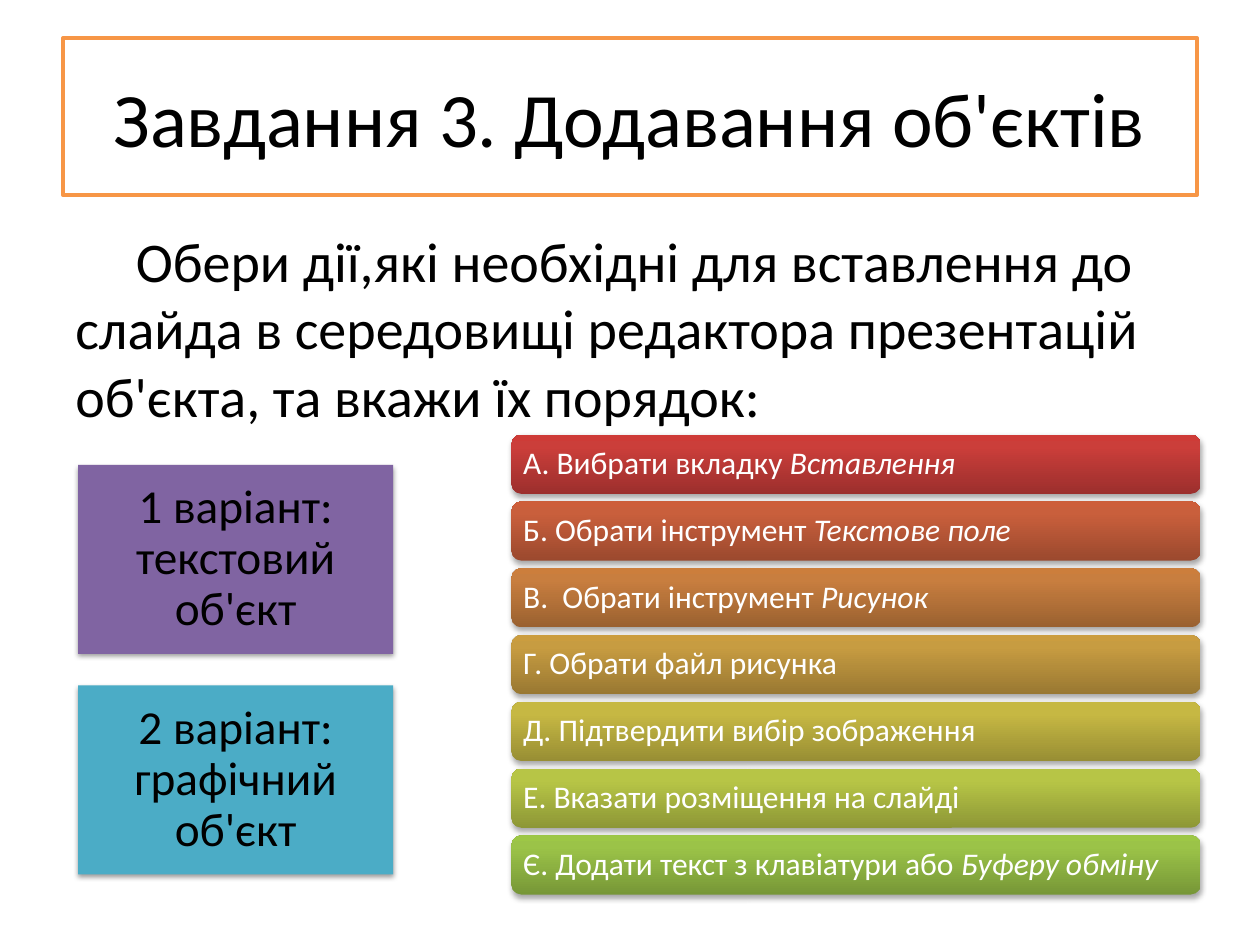
"""Builds the slide of task 3 with two variants and seven steps to order."""
from lxml.etree import SubElement
from pptx import Presentation
from pptx.dml.color import RGBColor
from pptx.enum.shapes import MSO_SHAPE as SHAPE
from pptx.enum.text import MSO_ANCHOR as ANCHOR, PP_ALIGN as ALIGN
from pptx.oxml.ns import qn
from pptx.util import Inches, Pt

FONT = "Calibri"
COLORS = {
    "black": "000000",
    "white": "FFFFFF",
    "orange": "F79646",
    "purple": "8064A2",
    "aqua": "4BACC6",
}
GRADIENTS = {
    "red": ("9C2F2D", "CB3E3A", "CE3B37"),
    "brick": ("9B492E", "C95F3C", "CD5E3A"),
    "copper": ("9A6130", "C87E3F", "CC7E3C"),
    "gold": ("997832", "C79C41", "CB9D3F"),
    "mustard": ("988E34", "C6B843", "C9BB41"),
    "lime": ("8D9736", "B7C546", "B9C844"),
    "green": ("779737", "9BC348", "9DC746"),
}
STOPS = (0, 80, 100)
VARIANTS = [
    ("1 варіант: текстовий об'єкт", "purple"),
    ("2 варіант: графічний об'єкт", "aqua"),
]
STEPS = [
    ("А. Вибрати вкладку ", "Вставлення", "red"),
    ("Б. Обрати інструмент ", "Текстове поле", "brick"),
    ("В.  Обрати інструмент ", "Рисунок", "copper"),
    ("Г. Обрати файл рисунка", "", "gold"),
    ("Д. Підтвердити вибір зображення", "", "mustard"),
    ("Е. Вказати розміщення на слайді", "", "lime"),
    ("Є. Додати текст з клавіатури або ", "Буферу обміну", "green"),
]


def rgb(name):
    return RGBColor.from_string(COLORS[name])


def add_box(s, shape, left, top, width, height):
    sp = s.shapes.add_shape(
        shape, Inches(left), Inches(top), Inches(width), Inches(height))
    sp.line.fill.background()
    sp.shadow.inherit = False
    return sp


def fill_solid(sp, color):
    sp.fill.solid()
    sp.fill.fore_color.rgb = rgb(color)


def fill_gradient(sp, shades):
    sp.fill.gradient()
    sp.fill.gradient_angle = 90
    stops = sp._element.spPr.find(qn("a:gradFill")).find(qn("a:gsLst"))
    for stop in list(stops):
        stops.remove(stop)
    for pos, shade in zip(STOPS, shades):
        stop = SubElement(stops, qn("a:gs"), pos=str(pos * 1000))
        SubElement(stop, qn("a:srgbClr"), val=shade)


def add_shadow(sp, opacity, distance):
    effects = sp._element.spPr.find(qn("a:effectLst"))
    shadow = SubElement(
        effects, qn("a:outerShdw"), blurRad=str(Pt(3.1)),
        dist=str(Pt(distance)), dir="5400000", rotWithShape="0")
    color = SubElement(shadow, qn("a:srgbClr"), val=COLORS["black"])
    SubElement(color, qn("a:alpha"), val=str(opacity * 1000))


def set_text(sp, runs, size, color, align=ALIGN.LEFT, anchor=ANCHOR.MIDDLE,
             inset=None, spacing=None):
    tf = sp.text_frame
    tf.word_wrap = True
    tf.vertical_anchor = anchor
    if inset is not None:
        tf.margin_left = tf.margin_right = Inches(inset)
        tf.margin_top = tf.margin_bottom = Inches(inset)
    p = tf.paragraphs[0]
    p.alignment = align
    p.line_spacing = spacing
    for text, italic in runs:
        r = p.add_run()
        r.text = text
        r.font.name = FONT
        r.font.size = Pt(size)
        r.font.italic = italic
        r.font.color.rgb = rgb(color)
    return p


def add_title(s, text):
    sp = add_box(s, SHAPE.RECTANGLE, 0.5, 0.3, 9, 1.25)
    fill_solid(sp, "white")
    sp.line.color.rgb = rgb("orange")
    sp.line.width = Pt(2)
    set_text(sp, [(text, False)], 44, "black", ALIGN.CENTER)


def add_task(s, text):
    sp = s.shapes.add_textbox(
        Inches(0.5), Inches(1.75), Inches(9), Inches(1.69))
    p = set_text(sp, [(text, False)], 32, "black", anchor=ANCHOR.TOP)
    p._p.get_or_add_pPr().set("indent", str(Inches(0.48)))


def add_step(s, top, text, term, shades):
    sp = add_box(s, SHAPE.ROUNDED_RECTANGLE, 4.06, top, 5.47, 0.47)
    fill_gradient(sp, shades)
    add_shadow(sp, 35, 1.8)
    runs = [(text, False)] + ([(term, True)] if term else [])
    set_text(sp, runs, 18, "white", inset=0.07, spacing=0.9)


def add_variant(s, top, text, color):
    sp = add_box(s, SHAPE.RECTANGLE, 0.62, top, 2.5, 1.5)
    fill_solid(sp, color)
    add_shadow(sp, 38, 1.6)
    set_text(sp, [(text, False)], 27, "black", ALIGN.CENTER,
             inset=0.11, spacing=0.9)


def main():
    prs = Presentation()
    prs.slide_width, prs.slide_height = Inches(10), Inches(7.5)
    s = prs.slides.add_slide(prs.slide_layouts[6])
    add_title(s, "Завдання 3. Додавання об'єктів")
    add_task(s, "Обери дії,які необхідні для вставлення до слайда в середовищі "
                "редактора презентацій об'єкта, та вкажи їх порядок:")
    for i, (text, term, name) in enumerate(STEPS):
        add_step(s, 3.45 + 0.53 * i, text, term, GRADIENTS[name])
    for i, (text, color) in enumerate(VARIANTS):
        add_variant(s, 3.69 + 1.75 * i, text, color)
    prs.save("out.pptx")


if __name__ == "__main__":
    main()
